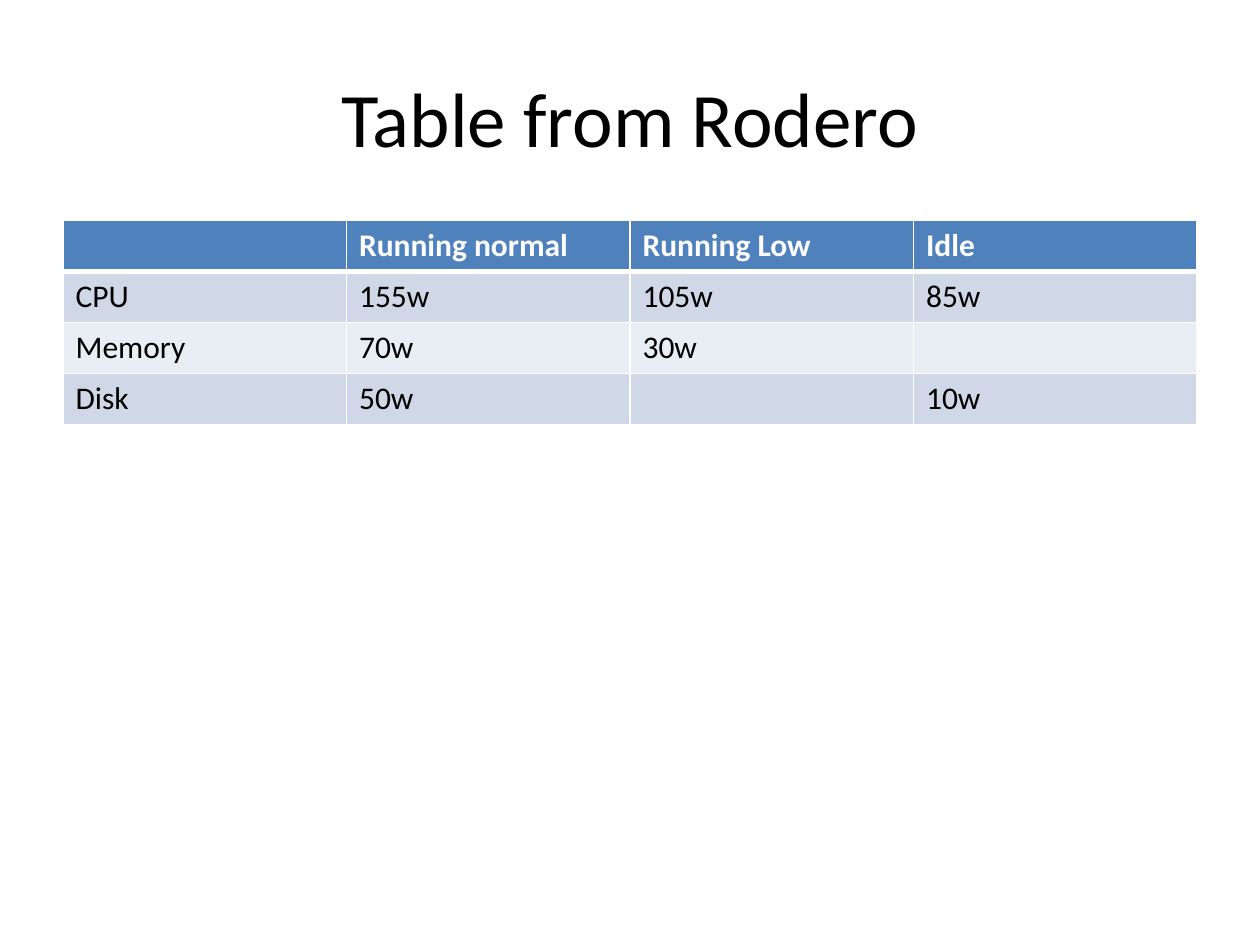
from lxml.etree import SubElement
from pptx import Presentation
from pptx.dml.color import RGBColor
from pptx.enum.text import MSO_ANCHOR as Anchor, PP_ALIGN as Align
from pptx.oxml.ns import qn
from pptx.util import Inches, Pt

BLACK = RGBColor(0x00, 0x00, 0x00)
WHITE = RGBColor(0xFF, 0xFF, 0xFF)
HEADER_BLUE = RGBColor(0x4F, 0x81, 0xBD)
BANDS = (RGBColor(0xE9, 0xED, 0xF4), RGBColor(0xD0, 0xD8, 0xE8))
FONT = "Calibri"

POWER_ROWS = [
    ["", "Running normal", "Running Low", "Idle"],
    ["CPU", "155w", "105w", "85w"],
    ["Memory", "70w", "30w", ""],
    ["Disk", "50w", "", "10w"],
]


def write_text(frame, text, size=18, color=BLACK, bold=False, align=Align.LEFT):
    paragraph = frame.paragraphs[0]
    paragraph.alignment = align
    paragraph.font.size = Pt(size)
    if text:
        run = paragraph.add_run()
        run.text = text
        run.font.name = FONT
        run.font.size = Pt(size)
        run.font.bold = bold
        run.font.color.rgb = color


def add_borders(cell, widths):
    properties = cell._tc.get_or_add_tcPr()
    for side, width in widths.items():
        line = SubElement(properties, qn(f"a:ln{side}"), w=str(Pt(width)))
        fill = SubElement(line, qn("a:solidFill"))
        SubElement(fill, qn("a:srgbClr"), val=str(WHITE))


def add_title(slide, box, text):
    shape = slide.shapes.add_textbox(*box)
    frame = shape.text_frame
    frame.word_wrap = True
    frame.vertical_anchor = Anchor.MIDDLE
    write_text(frame, text, size=44, align=Align.CENTER)


def add_power_table(slide, box, rows):
    table = slide.shapes.add_table(len(rows), len(rows[0]), *box).table
    for row_index, row in enumerate(rows):
        header = row_index == 0
        for column_index, text in enumerate(row):
            cell = table.cell(row_index, column_index)
            add_borders(cell, {
                "L": 1,
                "R": 1,
                "T": 3 if row_index == 1 else 1,
                "B": 3 if header else 1,
            })
            cell.fill.solid()
            cell.fill.fore_color.rgb = HEADER_BLUE if header else BANDS[row_index % 2]
            write_text(cell.text_frame, text, color=WHITE if header else BLACK, bold=header)


def main():
    presentation = Presentation()
    presentation.slide_width = Inches(10)
    presentation.slide_height = Inches(7.5)
    slide = presentation.slides.add_slide(presentation.slide_layouts[6])
    margin = presentation.slide_width * 0.05
    content_width = presentation.slide_width - 2 * margin

    def band(top, height):
        return [int(length) for length in (
            margin,
            presentation.slide_height * top,
            content_width,
            presentation.slide_height * height,
        )]

    add_title(slide, band(0.04, 1 / 6), "Table from Rodero")
    add_power_table(slide, band(7 / 30, 0.216), POWER_ROWS)
    presentation.save("out.pptx")


if __name__ == "__main__":
    main()
